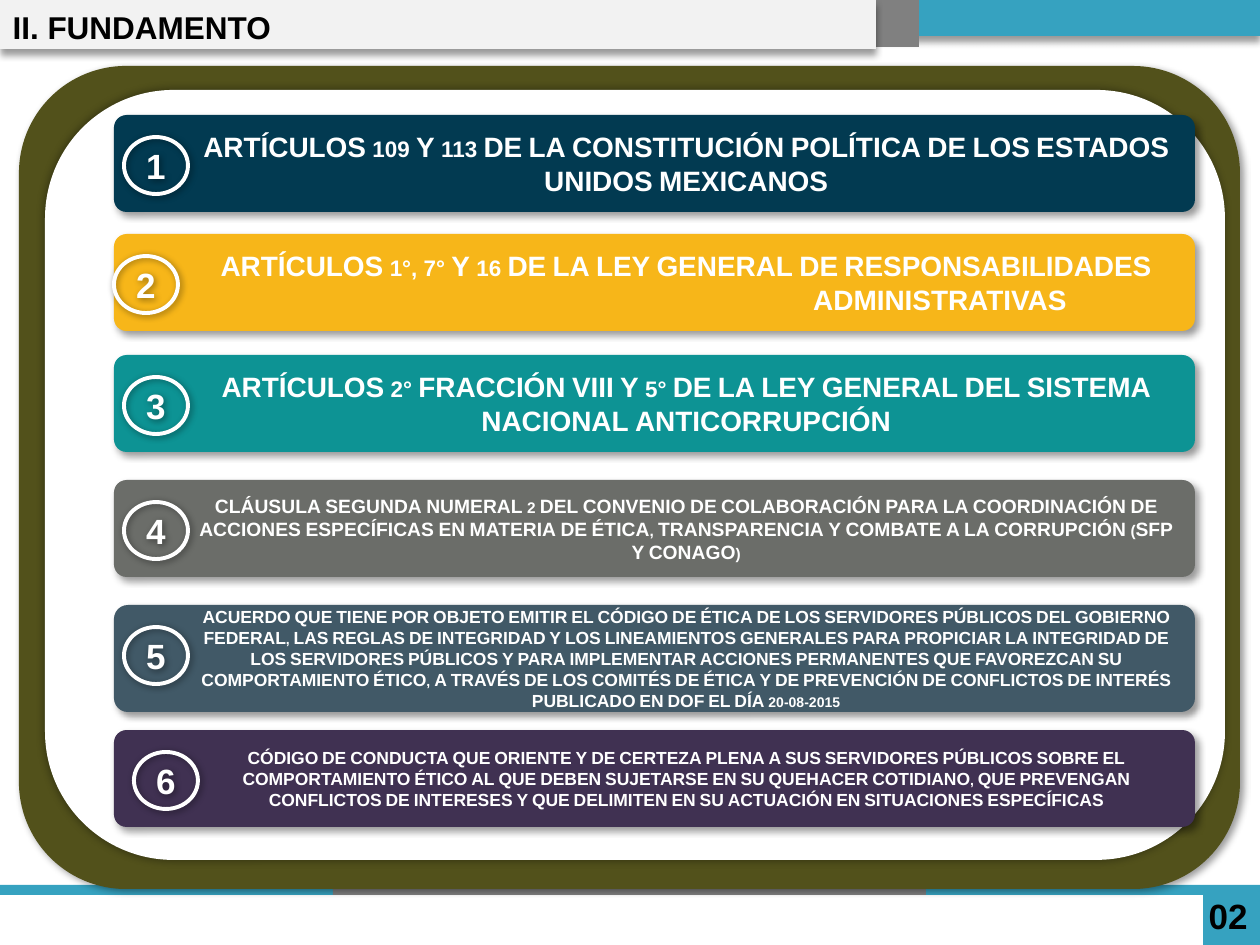
"""Build the FUNDAMENTO slide: six numbered legal grounds inside a rounded frame."""
from lxml import etree
from pptx import Presentation
from pptx import util as u
from pptx.dml.color import RGBColor
from pptx.enum import shapes, text
from pptx.oxml.ns import qn

SCALE = u.Inches(1) / 126
WHITE = RGBColor(0xFF, 0xFF, 0xFF)
BLACK = RGBColor(0, 0, 0)
BLUE = RGBColor(0x36, 0xA2, 0xC0)
GRAY = RGBColor(0x80, 0x80, 0x80)
LIGHT = RGBColor(0xF2, 0xF2, 0xF2)
OLIVE = RGBColor(0x52, 0x51, 0x1B)
NAVY = RGBColor(0x02, 0x3A, 0x51)
YELLOW = RGBColor(0xF7, 0xB6, 0x19)
TEAL = RGBColor(0x0D, 0x93, 0x94)
STONE = RGBColor(0x6B, 0x6D, 0x69)
SLATE = RGBColor(0x41, 0x59, 0x67)
PURPLE = RGBColor(0x40, 0x31, 0x52)
RECTANGLE = shapes.MSO_SHAPE.RECTANGLE
ROUNDED = shapes.MSO_SHAPE.ROUNDED_RECTANGLE
OVAL = shapes.MSO_SHAPE.OVAL

presentation = Presentation()
presentation.slide_width, presentation.slide_height = u.Inches(10), u.Inches(7.5)
slide = presentation.slides.add_slide(presentation.slide_layouts[5])


def add_shape(kind, box, fill=None, shadow=None):
    shape = slide.shapes.add_shape(kind, *(round(value * SCALE) for value in box))
    if fill is None:
        shape.fill.background()
    else:
        shape.fill.solid()
        shape.fill.fore_color.rgb = fill
    shape.line.fill.background()
    shape.shadow.inherit = False
    if shadow:
        blur, distance, angle = shadow
        effects = shape._element.spPr.find(qn("a:effectLst"))
        outer = etree.SubElement(
            effects, qn("a:outerShdw"), blurRad=str(u.Pt(blur)), dist=str(u.Pt(distance)),
            dir=str(angle * 60000), algn="ctr", rotWithShape="0")
        color = etree.SubElement(outer, qn("a:srgbClr"), val="000000")
        etree.SubElement(color, qn("a:alpha"), val="40000")
    return shape


def write(paragraph, words, size, color, alignment):
    paragraph.text = words
    paragraph.alignment = alignment
    paragraph.font.name = "Arial"
    paragraph.font.size = u.Pt(size)
    paragraph.font.bold = True
    paragraph.font.color.rgb = color


for box, fill, shadow in [
    ((596, 0, 664, 36), BLUE, (4, 3, 90)),
    ((833, 0, 86, 47), GRAY, None),
    ((0, 0, 876, 49), LIGHT, (4, 3, 90)),
    ((1203, 890, 57, 55), BLUE, None),
    ((0, 885, 334, 10), BLUE, None),
    ((333, 885, 594, 10), GRAY, None),
    ((926, 885, 334, 10), BLUE, None),
]:
    add_shape(RECTANGLE, box, fill, shadow)

frame = add_shape(ROUNDED, (19, 66, 1221, 823), OLIVE, (4, 3, 45))
frame.adjustments[0] = 0.13
add_shape(ROUNDED, (45, 90, 1180, 770), WHITE, (5, 0, 0))

title = slide.shapes.title
title.left, title.top, title.width, title.height = (
    round(value * SCALE) for value in (0, 1, 958, 51))
title.text_frame.vertical_anchor = text.MSO_ANCHOR.MIDDLE
title.text_frame.auto_size = text.MSO_AUTO_SIZE.NONE
write(title.text_frame.paragraphs[0], "II. FUNDAMENTO", 18, BLACK, text.PP_ALIGN.LEFT)
slide.shapes._spTree.append(title._element)

number = slide.shapes.add_textbox(*(round(value * SCALE) for value in (1196, 888, 64, 55)))
number.text_frame.word_wrap = True
number.text_frame.margin_left = 0
write(number.text_frame.paragraphs[0], "02", 20, BLACK, text.PP_ALIGN.RIGHT)

grounds = [
    (115, 97, 124, NAVY, 16, [
        ("ARTÍCULOS 109 Y 113 DE LA CONSTITUCIÓN POLÍTICA DE LOS ESTADOS "
         "UNIDOS MEXICANOS", 0)]),
    (234, 97, 114, YELLOW, 16, [
        ("ARTÍCULOS 1°, 7° Y 16 DE LA LEY GENERAL DE RESPONSABILIDADES", 0),
        ("ADMINISTRATIVAS", 254)]),
    (355, 97, 124, TEAL, 16, [
        ("ARTÍCULOS 2° FRACCIÓN VIII Y 5° DE LA LEY GENERAL DEL SISTEMA "
         "NACIONAL ANTICORRUPCIÓN", 0)]),
    (480, 97, 124, STONE, 11, [
        ("CLÁUSULA SEGUNDA NUMERAL 2 DEL CONVENIO DE COLABORACIÓN PARA LA "
         "COORDINACIÓN DE ACCIONES ESPECÍFICAS EN MATERIA DE ÉTICA, TRANSPARENCIA "
         "Y COMBATE A LA CORRUPCIÓN (SFP Y CONAGO)", 0)]),
    (605, 107, 124, SLATE, 10, [
        ("ACUERDO QUE TIENE POR OBJETO EMITIR EL CÓDIGO DE ÉTICA DE LOS SERVIDORES "
         "PÚBLICOS DEL GOBIERNO FEDERAL, LAS REGLAS DE INTEGRIDAD Y LOS LINEAMIENTOS "
         "GENERALES PARA PROPICIAR LA INTEGRIDAD DE LOS SERVIDORES PÚBLICOS Y PARA "
         "IMPLEMENTAR ACCIONES PERMANENTES QUE FAVOREZCAN SU COMPORTAMIENTO ÉTICO, "
         "A TRAVÉS DE LOS COMITÉS DE ÉTICA Y DE PREVENCIÓN DE CONFLICTOS DE INTERÉS "
         "PUBLICADO EN DOF EL DÍA 20-08-2015", 0)]),
    (730, 97, 134, PURPLE, 10, [
        ("CÓDIGO DE CONDUCTA QUE ORIENTE Y DE CERTEZA PLENA A SUS SERVIDORES PÚBLICOS "
         "SOBRE EL COMPORTAMIENTO ÉTICO AL QUE DEBEN SUJETARSE EN SU QUEHACER COTIDIANO, "
         "QUE PREVENGAN CONFLICTOS DE INTERESES Y QUE DELIMITEN EN SU ACTUACIÓN EN "
         "SITUACIONES ESPECÍFICAS", 0)]),
]

for index, (top, height, badge_left, fill, size, lines) in enumerate(grounds, 1):
    bar = add_shape(ROUNDED, (114, top, 1081, height), fill, (4, 3, 45))
    bar.adjustments[0] = 0.13
    body = bar.text_frame
    body.word_wrap = True
    body.vertical_anchor = text.MSO_ANCHOR.MIDDLE
    body.margin_left = round(76 * SCALE)
    for position, (words, indent) in enumerate(lines):
        paragraph = body.add_paragraph() if position else body.paragraphs[0]
        write(paragraph, words, size, WHITE, text.PP_ALIGN.CENTER)
        paragraph.font._rPr.set("cap", "small")
        if indent:
            paragraph._p.get_or_add_pPr().set("marL", str(round(indent * SCALE)))

    badge = add_shape(OVAL, (badge_left, top + 22, 64, 57), shadow=(4, 1, 45))
    badge.line.color.rgb = WHITE
    badge.line.width = u.Pt(2.25)
    badge.text_frame.vertical_anchor = text.MSO_ANCHOR.MIDDLE
    write(badge.text_frame.paragraphs[0], str(index), 20, WHITE, text.PP_ALIGN.CENTER)

presentation.save("out.pptx")
